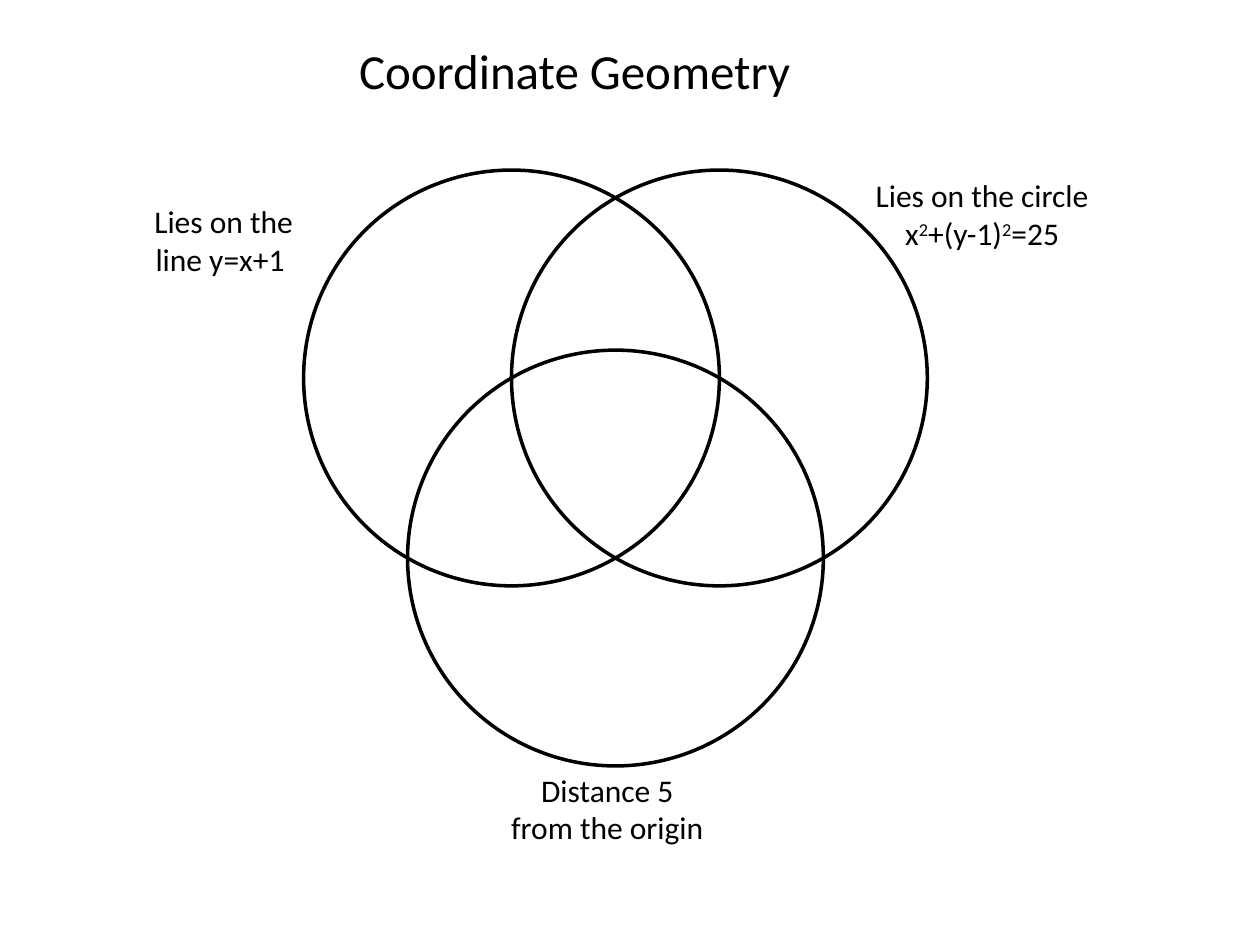
import math

import pptx
import pptx.dml.color
import pptx.enum.shapes
import pptx.enum.text
import pptx.util

BLACK = pptx.dml.color.RGBColor(0, 0, 0)
WHITE = pptx.dml.color.RGBColor(255, 255, 255)
WIDE, HIGH = 10, 7.5
FONT = "Calibri"
ALIGN = pptx.enum.text.PP_ALIGN
RAISED = 30000


def share(left, top, width, height):
    """Turn shares of the slide's size into a box of lengths."""
    return [pptx.util.Inches(part * size) for part, size in
            zip((left, top, width, height), (WIDE, HIGH, WIDE, HIGH))]


def fill_text(shape, runs, size, align, wrap=True):
    """Write (text, raised) runs as one paragraph."""
    frame = shape.text_frame
    frame.word_wrap = wrap
    frame.auto_size = pptx.enum.text.MSO_AUTO_SIZE.NONE
    frame.vertical_anchor = pptx.enum.text.MSO_ANCHOR.TOP
    line = frame.paragraphs[0]
    line.alignment = align
    for text, raised in runs:
        run = line.add_run()
        run.text = text
        run.font.name = FONT
        run.font.size = pptx.util.Pt(size)
        run.font.color.rgb = BLACK
        if raised:
            run.font._element.set("baseline", str(RAISED))


def add_title(slide, box, text):
    title = slide.shapes.title
    title.left, title.top, title.width, title.height = box
    fill_text(title, [(text, False)], 28, ALIGN.LEFT, wrap=False)


def add_venn(slide, box):
    """Draw three circles whose centres are one radius apart."""
    left, top, width, _ = box
    radius = width / 3
    drop = radius * math.sqrt(3) / 2
    group = slide.shapes.add_group_shape()
    for col, row in ((0, 0), (1, 0), (0.5, 1)):
        ring = group.shapes.add_shape(
            pptx.enum.shapes.MSO_SHAPE.OVAL,
            round(left + col * radius), round(top + row * drop),
            round(2 * radius), round(2 * radius))
        ring.shadow.inherit = False
        ring.fill.background()
        ring.line.color.rgb = BLACK
        ring.line.width = pptx.util.Pt(2)


def add_label(slide, box, runs):
    fill_text(slide.shapes.add_textbox(*box), runs, 18, ALIGN.CENTER)


def main():
    deck = pptx.Presentation()
    deck.slide_width = pptx.util.Inches(WIDE)
    deck.slide_height = pptx.util.Inches(HIGH)
    slide = deck.slides.add_slide(deck.slide_layouts.get_by_name("Title Only"))
    slide.background.fill.solid()
    slide.background.fill.fore_color.rgb = WHITE

    add_venn(slide, share(0.241, 0.18, 0.495, 0.63))
    labels = (
        (share(0.099, 0.207, 0.157, 0.095),
         [("Lies on the line y=x+1 ", False)]),
        (share(0.678, 0.18, 0.203, 0.095),
         [("Lies on the circle x", False), ("2", True), ("+(y-1)", False),
          ("2", True), ("=25", False)]),
        (share(0.393, 0.809, 0.178, 0.095),
         [("Distance 5 from the origin", False)]),
    )
    for box, runs in labels:
        add_label(slide, box, runs)
    add_title(slide, share(0.275, 0.036, 0.366, 0.076), "Coordinate Geometry")
    deck.save("out.pptx")


if __name__ == "__main__":
    main()
